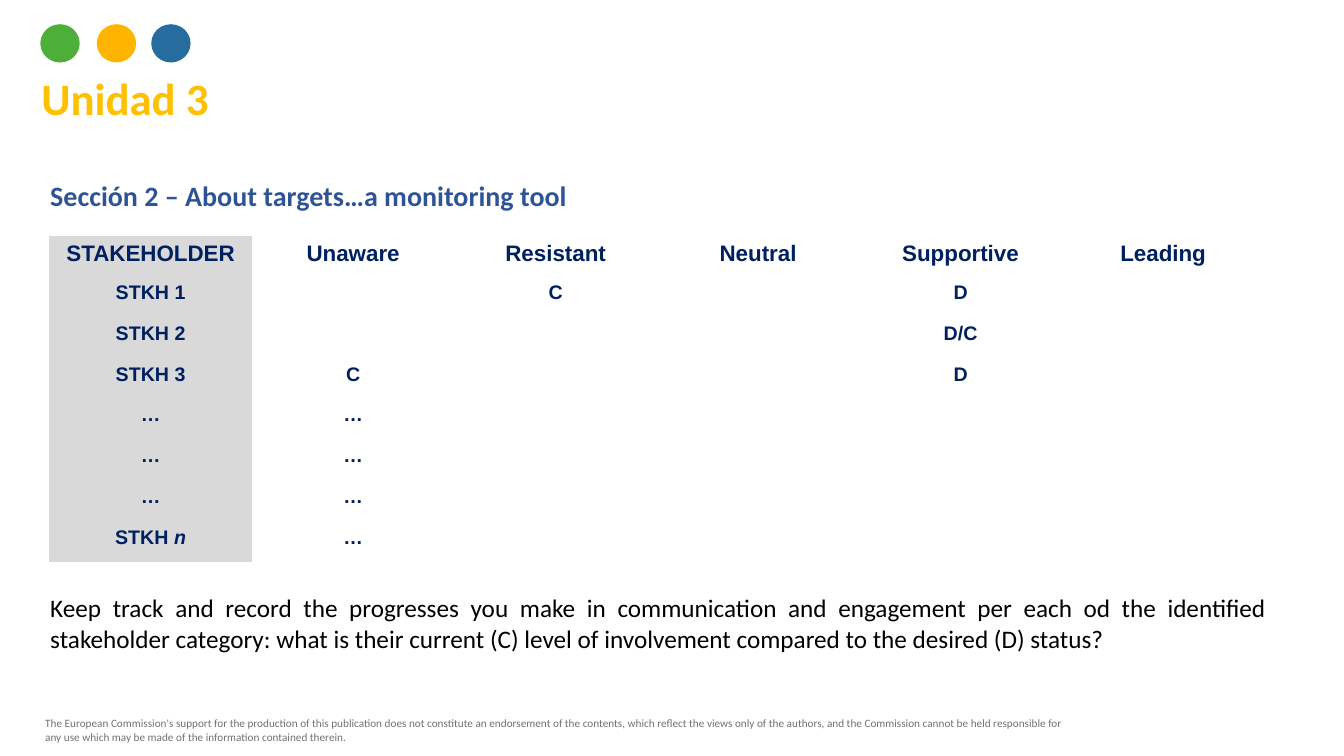
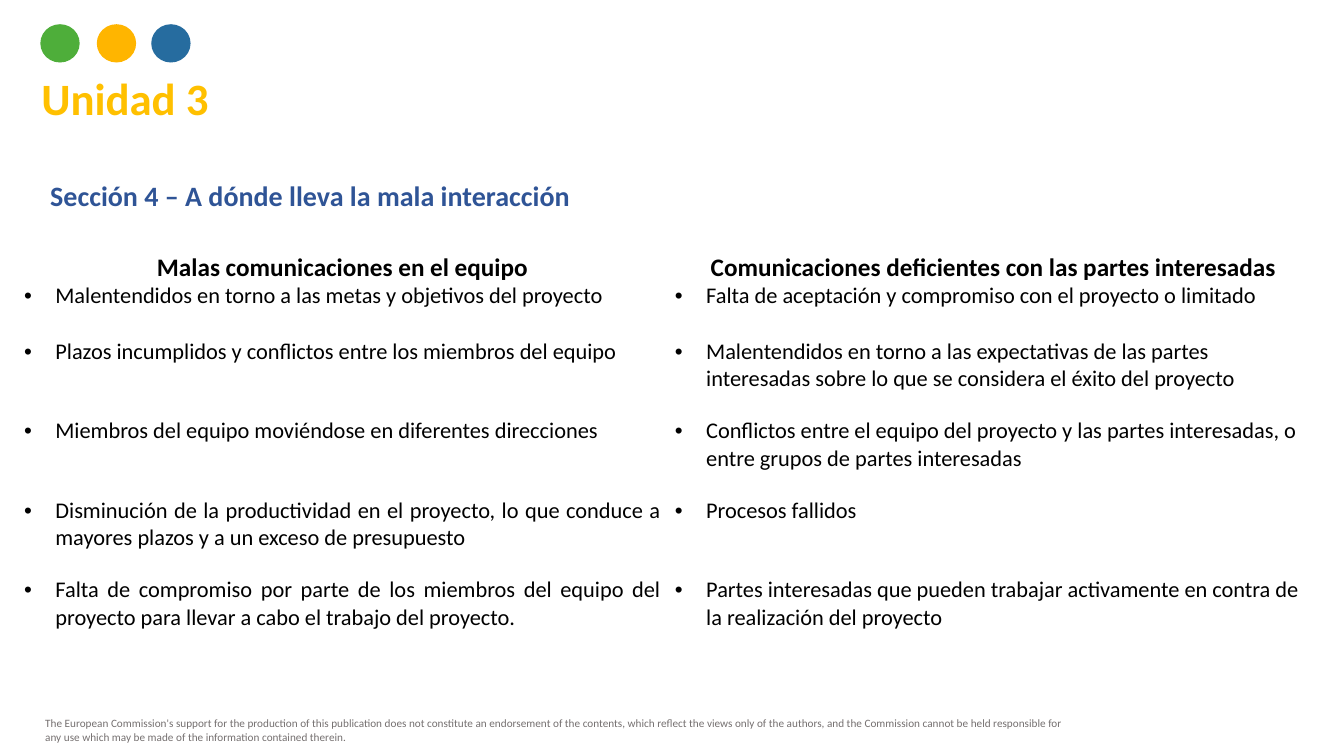
import dataclasses

import lxml.etree
import pptx
import pptx.dml.color
import pptx.enum.shapes
import pptx.enum.text
import pptx.oxml.ns
import pptx.util

Inches = pptx.util.Inches
ALIGN = pptx.enum.text.PP_ALIGN


@dataclasses.dataclass(frozen=True)
class Theme:
    body_font: str = "Calibri"
    grid_font: str = "Arial"
    title: str = "FFC000"
    section: str = "2F5496"
    text: str = "000000"
    grid_text: str = "002060"
    grid_fill: str = "D9D9D9"
    footer: str = "757070"
    dots: tuple = ("4EAE3A", "FFB500", "266C9F")
    title_size: int = 32
    section_size: int = 20
    body_size: int = 18
    item_size: int = 16
    grid_size: int = 14
    footer_size: int = 8


THEME = Theme()
PLAIN_TABLE = "{2D5ABB26-0587-4C30-8999-92F81FD0307C}"
FOOTER = (
    "The European Commission's support for the production of this publication does not "
    "constitute an endorsement of the contents, which reflect the views only of the authors, "
    "and the Commission cannot be held responsible for any use which may be made of the "
    "information contained therein."
)
LEVELS = ["STAKEHOLDER", "Unaware", "Resistant", "Neutral", "Supportive", "Leading"]
STAKEHOLDERS = [
    ["STKH 1", "", "C", "", "D", ""],
    ["STKH 2", "", "", "", "D/C", ""],
    ["STKH 3", "C", "", "", "D", ""],
    *[["…", "…", "", "", "", ""]] * 3,
    ["STKH ", "…", "", "", "", ""],
]
EFFECT_HEADS = [
    "Malas comunicaciones en el equipo",
    "Comunicaciones deficientes con las partes interesadas",
]
EFFECTS = [
    ("Malentendidos en torno a las metas y objetivos del proyecto",
     "Falta de aceptación y compromiso con el proyecto o limitado"),
    ("Plazos incumplidos y conflictos entre los miembros del equipo",
     "Malentendidos en torno a las expectativas de las partes interesadas sobre lo que se "
     "considera el éxito del proyecto"),
    ("Miembros del equipo moviéndose en diferentes direcciones",
     "Conflictos entre el equipo del proyecto y las partes interesadas, o entre grupos de "
     "partes interesadas"),
    ("Disminución de la productividad en el proyecto, lo que conduce a mayores plazos y a un "
     "exceso de presupuesto",
     "Procesos fallidos"),
    ("Falta de compromiso por parte de los miembros del equipo del proyecto para llevar a cabo "
     "el trabajo del proyecto.",
     "Partes interesadas que pueden trabajar activamente en contra de la realización del "
     "proyecto"),
]


def rgb(color):
    return pptx.dml.color.RGBColor.from_string(color)


def format_run(r, size, color, bold=False, font=THEME.body_font):
    r.font.name = font
    r.font.size = pptx.util.Pt(size)
    r.font.bold = bold
    r.font.color.rgb = rgb(color)


def set_text(tf, text, size, color, bold=False, align=ALIGN.LEFT, font=THEME.body_font):
    p = tf.paragraphs[0]
    p.text = text
    p.alignment = align
    for r in p.runs:
        format_run(r, size, color, bold, font)
    return p


def add_text(s, x, y, w, h, text, size, color, bold=False, align=ALIGN.LEFT):
    sp = s.shapes.add_textbox(Inches(x), Inches(y), Inches(w), Inches(h))
    sp.text_frame.word_wrap = True
    set_text(sp.text_frame, text, size, color, bold, align)


def add_bullet(p, color):
    pPr = p._p.get_or_add_pPr()
    pPr.set("marL", str(Inches(0.31)))
    pPr.set("indent", str(-Inches(0.31)))
    qn = pptx.oxml.ns.qn
    clr = lxml.etree.SubElement(pPr, qn("a:buClr"))
    lxml.etree.SubElement(clr, qn("a:srgbClr"), val=color)
    lxml.etree.SubElement(pPr, qn("a:buFont"), typeface="Arial")
    lxml.etree.SubElement(pPr, qn("a:buChar"), char="•")


def add_plain_table(s, x, y, w, row_heights, cols):
    frame = s.shapes.add_table(len(row_heights), cols, Inches(x), Inches(y),
                               Inches(w), Inches(sum(row_heights)))
    table = frame.table
    table.first_row = table.horz_banding = False
    table._tbl.tblPr.find(pptx.oxml.ns.qn("a:tableStyleId")).text = PLAIN_TABLE
    for row, height in zip(table.rows, row_heights):
        row.height = Inches(height)
    for column in table.columns:
        column.width = Inches(w / cols)
    for cell in table.iter_cells():
        cell.fill.background()
    return table


def add_dots(s):
    for x, color in zip((0.4, 0.96, 1.5), THEME.dots):
        sp = s.shapes.add_shape(pptx.enum.shapes.MSO_SHAPE.OVAL, Inches(x), Inches(0.24),
                                Inches(0.39), Inches(0.38))
        sp.shadow.inherit = False
        sp.fill.solid()
        sp.fill.fore_color.rgb = rgb(color)
        sp.line.fill.background()


def add_unit_slide(prs, section):
    s = prs.slides.add_slide(prs.slide_layouts[5])
    sp = s.shapes.title
    sp.left, sp.top, sp.width, sp.height = map(Inches, (0.31, 0.65, 1.97, 0.64))
    tf = sp.text_frame
    tf.vertical_anchor = pptx.enum.text.MSO_ANCHOR.TOP
    tf.auto_size = pptx.enum.text.MSO_AUTO_SIZE.NONE
    set_text(tf, "Unidad 3", THEME.title_size, THEME.title, True)
    add_dots(s)
    add_text(s, 0.4, 1.72, 12.26, 0.44, section, THEME.section_size, THEME.section,
             True, ALIGN.JUSTIFY)
    add_text(s, 0.35, 7.06, 10.46, 0.37, FOOTER, THEME.footer_size, THEME.footer)
    return s


def add_stakeholder_table(s):
    rows = [LEVELS, *STAKEHOLDERS]
    table = add_plain_table(s, 0.49, 2.34, 12.05, [3.24 / len(rows)] * len(rows), len(LEVELS))
    for i, row in enumerate(rows):
        size = THEME.grid_size if i else THEME.item_size
        for j, text in enumerate(row):
            if text:
                set_text(table.cell(i, j).text_frame, text, size, THEME.grid_text, True,
                         ALIGN.CENTER, THEME.grid_font)
        fill = table.cell(i, 0).fill
        fill.solid()
        fill.fore_color.rgb = rgb(THEME.grid_fill)
    r = table.cell(len(rows) - 1, 0).text_frame.paragraphs[0].add_run()
    r.text = "n"
    format_run(r, THEME.grid_size, THEME.grid_text, True, THEME.grid_font)
    r.font.italic = True


def add_effects_table(s):
    table = add_plain_table(s, 0.17, 2.48, 12.91, [0.3, 0.55] + [0.79] * 4, 2)
    for cell in table.iter_cells():
        cell.margin_left = cell.margin_right = Inches(0.07)
        cell.margin_top = cell.margin_bottom = 0
    for j, text in enumerate(EFFECT_HEADS):
        p = set_text(table.cell(0, j).text_frame, text, THEME.body_size, THEME.text, True,
                     ALIGN.CENTER)
        p.line_spacing = 1.07
    for i, row in enumerate(EFFECTS, 1):
        for j, (text, align) in enumerate(zip(row, (ALIGN.JUSTIFY, ALIGN.LEFT))):
            p = set_text(table.cell(i, j).text_frame, text, THEME.item_size, THEME.text,
                         align=align)
            add_bullet(p, THEME.text)


def main():
    prs = pptx.Presentation()
    prs.slide_width, prs.slide_height = Inches(13.33), Inches(7.5)

    s = add_unit_slide(prs, "Sección 2 – About targets…a monitoring tool")
    add_stakeholder_table(s)
    add_text(s, 0.4, 5.83, 12.26, 0.71,
             "Keep track and record the progresses you make in communication and engagement "
             "per each od the identified stakeholder category: what is their current (C) level "
             "of involvement compared to the desired (D) status?",
             THEME.body_size, THEME.text, align=ALIGN.JUSTIFY)

    s = add_unit_slide(prs, "Sección 4 – A dónde lleva la mala interacción")
    add_effects_table(s)

    prs.save("out.pptx")


if __name__ == "__main__":
    main()
